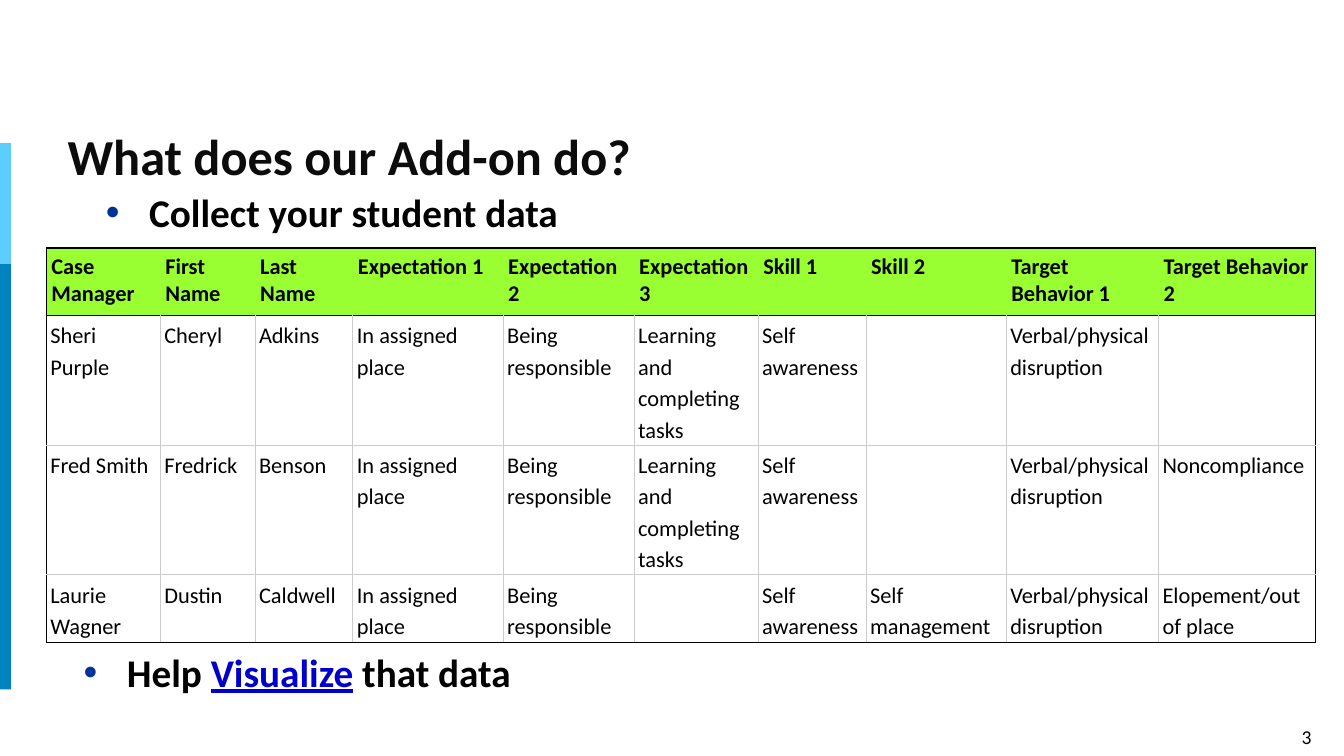
from lxml.etree import SubElement
from pptx import Presentation
from pptx.dml.color import RGBColor
from pptx.enum.shapes import MSO_SHAPE
from pptx.enum.text import MSO_ANCHOR, PP_ALIGN
from pptx.oxml import parse_xml
from pptx.oxml.ns import nsdecls, qn
from pptx.util import Inches, Pt

COLORS = {
    "black": "000000", "title": "0C0C0C", "bullet": "003399", "link": "0000CC",
    "header": "99FF33", "grid": "CCCCCC", "light stripe": "5DCDFF", "dark stripe": "0083BF",
}

presentation = Presentation()
presentation.slide_width = Inches(13.33)
presentation.slide_height = Inches(7.5)
slide = presentation.slides.add_slide(presentation.slide_layouts[6])


def place(left, top, width, height):
    across, down = presentation.slide_width / 100, presentation.slide_height / 100
    return int(left * across), int(top * down), int(width * across), int(height * down)


def add_text(box, margins, runs, size, bold):
    frame = slide.shapes.add_textbox(*place(*box)).text_frame
    frame.word_wrap = True
    frame.margin_left, frame.margin_top, frame.margin_right, frame.margin_bottom = map(Inches, margins)
    paragraph = frame.paragraphs[0]
    for text, color in runs:
        run = paragraph.add_run()
        run.text = text
        run.font.name = "Calibri"
        run.font.size = Pt(size)
        run.font.bold = bold
        run.font.underline = color == "link"
        run.font.color.rgb = RGBColor.from_string(COLORS[color])
    return frame


number = add_text((94.75, 95.2, 4.95, 4.53), (0.1, 0.05, 0.1, 0.05), [("3", "black")], 14, False)
number.paragraphs[0].alignment = PP_ALIGN.CENTER

for color, top, height in [("light stripe", 18.93, 16.13), ("dark stripe", 34.93, 56.27)]:
    stripe = slide.shapes.add_shape(MSO_SHAPE.RECTANGLE, *place(-0.23, top, 1.05, height))
    stripe.shadow.inherit = False
    stripe.fill.solid()
    stripe.fill.fore_color.rgb = RGBColor.from_string(COLORS[color])
    stripe.line.fill.background()

title = add_text((5.03, 16.4, 90.1, 7.87), (0, 0.2, 0.1, 0.05),
                 [("What does our Add-on do?", "title")], 36, True)
title.vertical_anchor = MSO_ANCHOR.MIDDLE
title.paragraphs[0].line_spacing = 0.8

bullets = [
    ((5.1, 24.27, 90.1, 6), [("Collect your student data", "black")]),
    ((3.45, 85.07, 90.1, 6.67), [("Help ", "black"), ("Visualize", "link"), (" that data", "black")]),
]
for box, runs in bullets:
    frame = add_text(box, (0.3, 0.05, 0.05, 0.05), runs, 28, True)
    properties = frame.paragraphs[0]._p.get_or_add_pPr()
    properties.set("marL", str(Inches(0.5)))
    properties.set("indent", str(Inches(-0.43)))
    bullet_color = SubElement(properties, qn("a:buClr"))
    SubElement(bullet_color, qn("a:srgbClr"), val=COLORS["bullet"])
    SubElement(properties, qn("a:buFont"), typeface="Arial")
    SubElement(properties, qn("a:buChar"), char="•")

records = [
    ["Case Manager", "First Name", "Last Name", "Expectation 1", "Expectation 2", "Expectation 3",
     "Skill 1", "Skill 2", "Target Behavior 1", "Target Behavior 2"],
    ["Sheri Purple", "Cheryl", "Adkins", "In assigned place", "Being responsible",
     "Learning and completing tasks", "Self awareness", "", "Verbal/physical disruption", ""],
    ["Fred Smith", "Fredrick", "Benson", "In assigned place", "Being responsible",
     "Learning and completing tasks", "Self awareness", "", "Verbal/physical disruption", "Noncompliance"],
    ["Laurie Wagner", "Dustin", "Caldwell", "In assigned place", "Being responsible",
     "", "Self awareness", "Self\nmanagement", "Verbal/physical disruption", "Elopement/out of place"],
]
column_shares = [8.48, 7.05, 7.28, 11.18, 9.75, 9.23, 8.03, 10.43, 11.33, 11.7]
row_shares = [8.93, 15.2, 15.2, 8.8]
last_row, last_column = len(row_shares) - 1, len(column_shares) - 1

table = slide.shapes.add_table(
    len(row_shares), len(column_shares),
    *place(3.45, 32.8, sum(column_shares), sum(row_shares))).table
table.first_row = False
table.horz_banding = False
for column, share in zip(table.columns, column_shares):
    column.width = int(presentation.slide_width * share / 100)
for row, share in zip(table.rows, row_shares):
    row.height = int(presentation.slide_height * share / 100)

for row_index, record in enumerate(records):
    is_header = row_index == 0
    for column_index, text in enumerate(record):
        cell = table.cell(row_index, column_index)
        cell.text_frame.text = text
        cell.margin_left = cell.margin_right = Inches(0.05 if is_header else 0.04)
        cell.margin_top = cell.margin_bottom = Inches(0.05 if is_header else 0.03)
        for paragraph in cell.text_frame.paragraphs:
            paragraph.line_spacing = 1.0 if is_header else 1.15
            paragraph.font.size = Pt(16)
            for run in paragraph.runs:
                run.font.name = "Calibri"
                run.font.size = Pt(16)
                run.font.bold = is_header
                run.font.color.rgb = RGBColor.from_string(COLORS["black"])
        if is_header:
            cell.fill.solid()
            cell.fill.fore_color.rgb = RGBColor.from_string(COLORS["header"])
        else:
            cell.fill.background()

        black_sides = {
            "lnL": column_index == 0,
            "lnR": column_index == last_column,
            "lnT": row_index <= 1,
            "lnB": row_index in (0, last_row),
        }
        for position, (side, is_black) in enumerate(black_sides.items()):
            color = COLORS["black" if is_black else "grid"]
            paint = f'<a:solidFill><a:srgbClr val="{color}"/></a:solidFill>'
            if is_header and not is_black:
                paint = "<a:noFill/>"
            width = Pt(1 if is_black else 0.75)
            border = parse_xml(f'<a:{side} {nsdecls("a")} w="{width}">{paint}</a:{side}>')
            cell._tc.get_or_add_tcPr().insert(position, border)

presentation.save("out.pptx")
